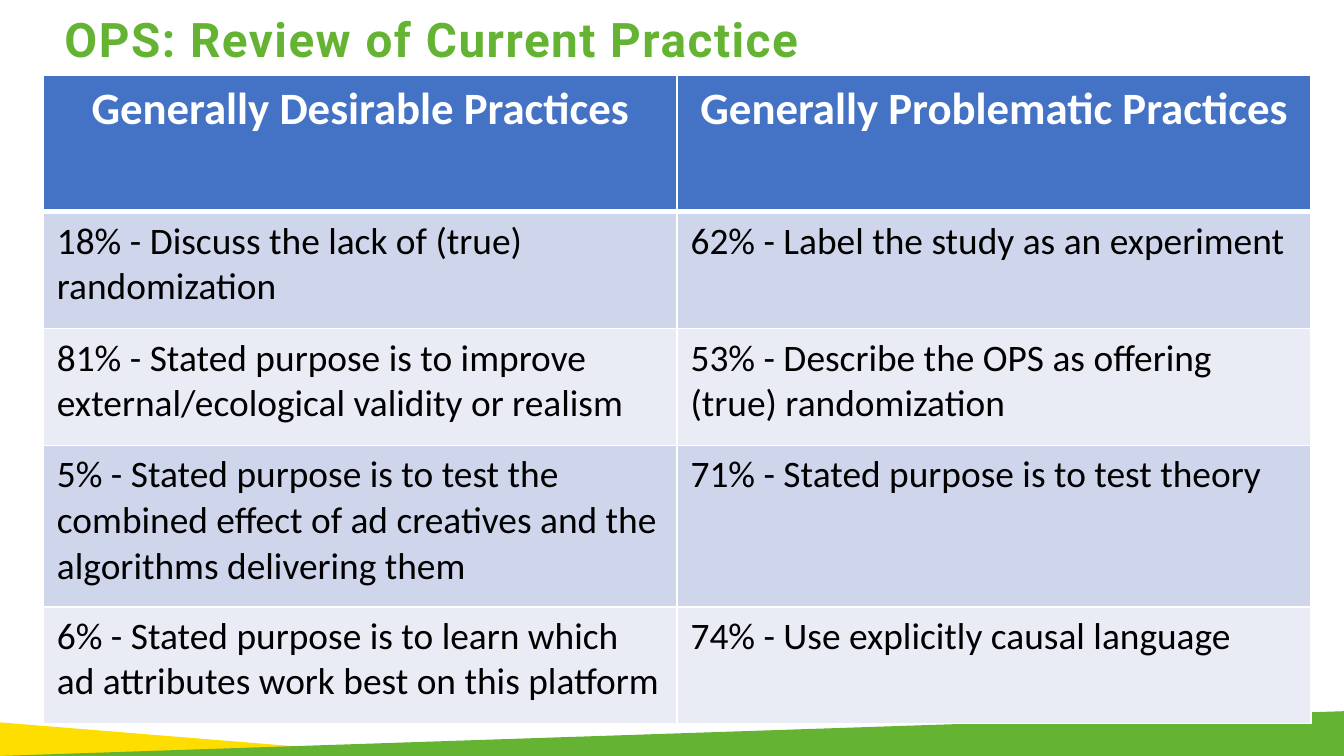
from dataclasses import dataclass
from lxml.etree import SubElement as Sub
from pptx import Presentation
from pptx.dml.color import RGBColor as Rgb
from pptx.enum.text import MSO_ANCHOR as Anchor, PP_ALIGN as Align
from pptx.oxml.ns import qn
from pptx.util import Pt


@dataclass(frozen=True)
class Theme:
    green: str = "65B333"
    gold: str = "FEDD00"
    blue: str = "4472C4"
    bands: tuple = ("CFD5EA", "E9EBF5")
    white: str = "FFFFFF"
    black: str = "000000"
    title: float = 25.5
    head: float = 24
    body: float = 20
    display: str = "Roboto"
    text: str = "Calibri"


class Deck:
    """Draws styled elements on the current slide."""

    def __init__(self, theme, wide, high):
        self.theme = theme
        self.prs = Presentation()
        self.prs.slide_width, self.prs.slide_height = Pt(wide), Pt(high)
        self.slide = self.prs.slides.add_slide(self.prs.slide_layouts[6])

    def paint(self, fill, color):
        fill.solid()
        fill.fore_color.rgb = Rgb.from_string(color)

    def label(self, para, text, color, **form):
        run = para.add_run()
        run.text = text
        for key, value in form.items():
            setattr(run.font, key, value)
        run.font.color.rgb = Rgb.from_string(color)
        return run

    def wedge(self, points, color):
        start, *rest = points
        pen = self.slide.shapes.build_freeform(*start, scale=Pt(1))
        pen.add_line_segments(rest, close=True)
        shape = pen.convert_to_shape()
        shape.shadow.inherit = False
        shape.line.fill.background()
        self.paint(shape.fill, color)

    def title(self, text, left, top, width, height):
        look = self.theme
        box = self.slide.shapes.add_textbox(*map(Pt, (left, top, width, height)))
        frame = box.text_frame
        for key, value in {"word_wrap": True, "vertical_anchor": Anchor.TOP}.items():
            setattr(frame, key, value)
        para = frame.paragraphs[0]
        para.line_spacing = 0.9
        run = self.label(para, text, look.green, name=look.display,
                         size=Pt(look.title), bold=True)
        run._r.get_or_add_rPr().set("spc", "80")

    def edge(self, cell, widths):
        props = cell._tc.get_or_add_tcPr()
        for spot, (side, width) in enumerate(widths.items()):
            line = Sub(props, qn(f"a:ln{side}"), w=str(Pt(width)))
            fill = Sub(line, qn("a:solidFill"))
            Sub(fill, qn("a:srgbClr"), val=self.theme.white)
            props.insert(spot, line)

    def cell(self, cell, text, row):
        look = self.theme
        head = row == 0
        para = cell.text_frame.paragraphs[0]
        para.alignment = Align.CENTER if head else Align.LEFT
        self.label(para, text, look.white if head else look.black, name=look.text,
                   size=Pt(look.head if head else look.body), bold=head)
        self.paint(cell.fill, look.blue if head else look.bands[(row - 1) % 2])
        self.edge(cell, {"L": 1, "R": 1, "T": 3 if row == 1 else 1, "B": 3 if head else 1})

    def table(self, rows, left, top, width, highs):
        shape = self.slide.shapes.add_table(
            len(rows), len(rows[0]), Pt(left), Pt(top), Pt(width), Pt(sum(highs)))
        grid = shape.table
        for r, (texts, high) in enumerate(zip(rows, highs)):
            grid.rows[r].height = Pt(high)
            for c, text in enumerate(texts):
                self.cell(grid.cell(r, c), text, r)

    def save(self):
        self.prs.save("out.pptx")


ROWS = [
    ("Generally Desirable Practices", "Generally Problematic Practices"),
    ("18% - Discuss the lack of (true) randomization",
     "62% - Label the study as an experiment"),
    ("81% - Stated purpose is to improve external/ecological validity or realism",
     "53% - Describe the OPS as offering (true) randomization"),
    ("5% - Stated purpose is to test the combined effect of ad creatives"
     " and the algorithms delivering them",
     "71% - Stated purpose is to test theory"),
    ("6% - Stated purpose is to learn which ad attributes work best on this platform",
     "74% - Use explicitly causal language"),
]


def main():
    theme = Theme()
    deck = Deck(theme, 720, 405)
    deck.wedge([(0, 386.6), (221.8, 405), (0, 405)], theme.gold)
    deck.wedge([(720, 381), (720, 405), (-0.7, 405)], theme.green)
    deck.title("OPS: Review of Current Practice", 27.4, 5, 627, 43)
    deck.table(ROWS, 23.3, 40.5, 679, [73, 62.6, 62.6, 86.4, 62.6])
    deck.save()


if __name__ == "__main__":
    main()
